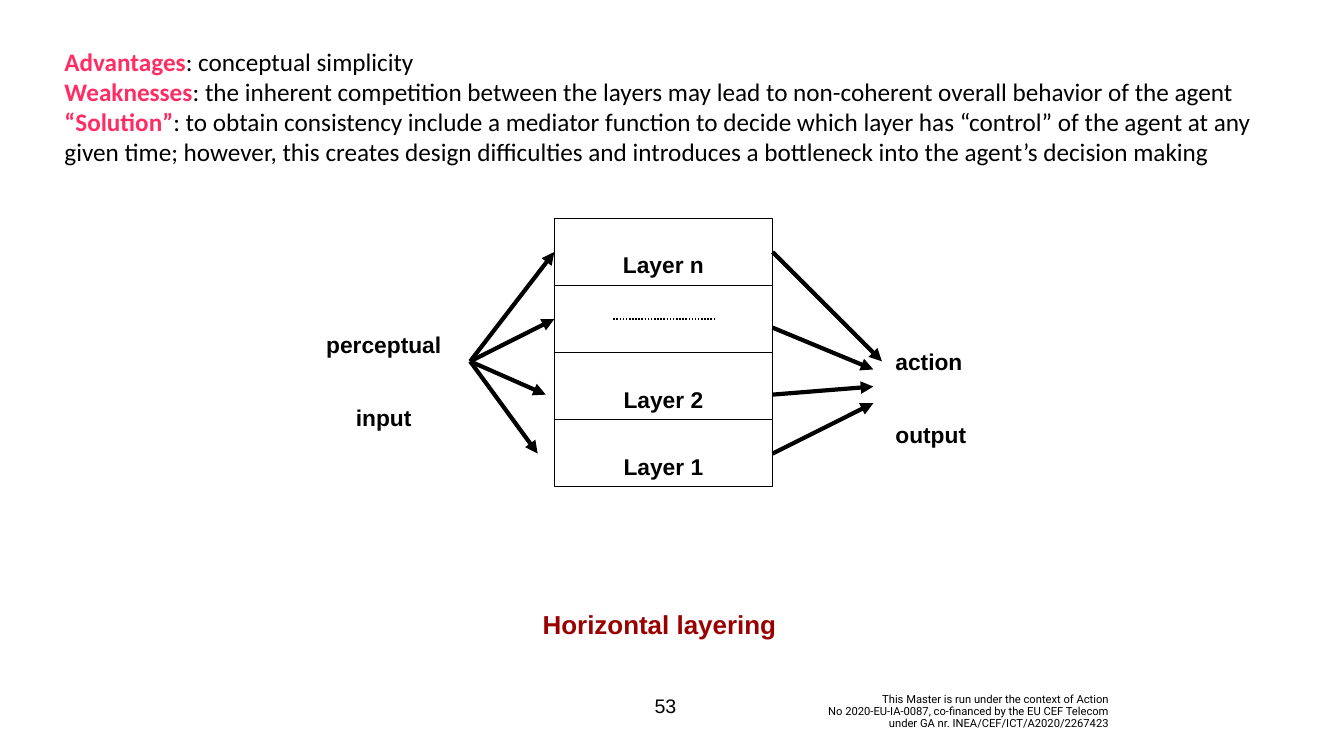
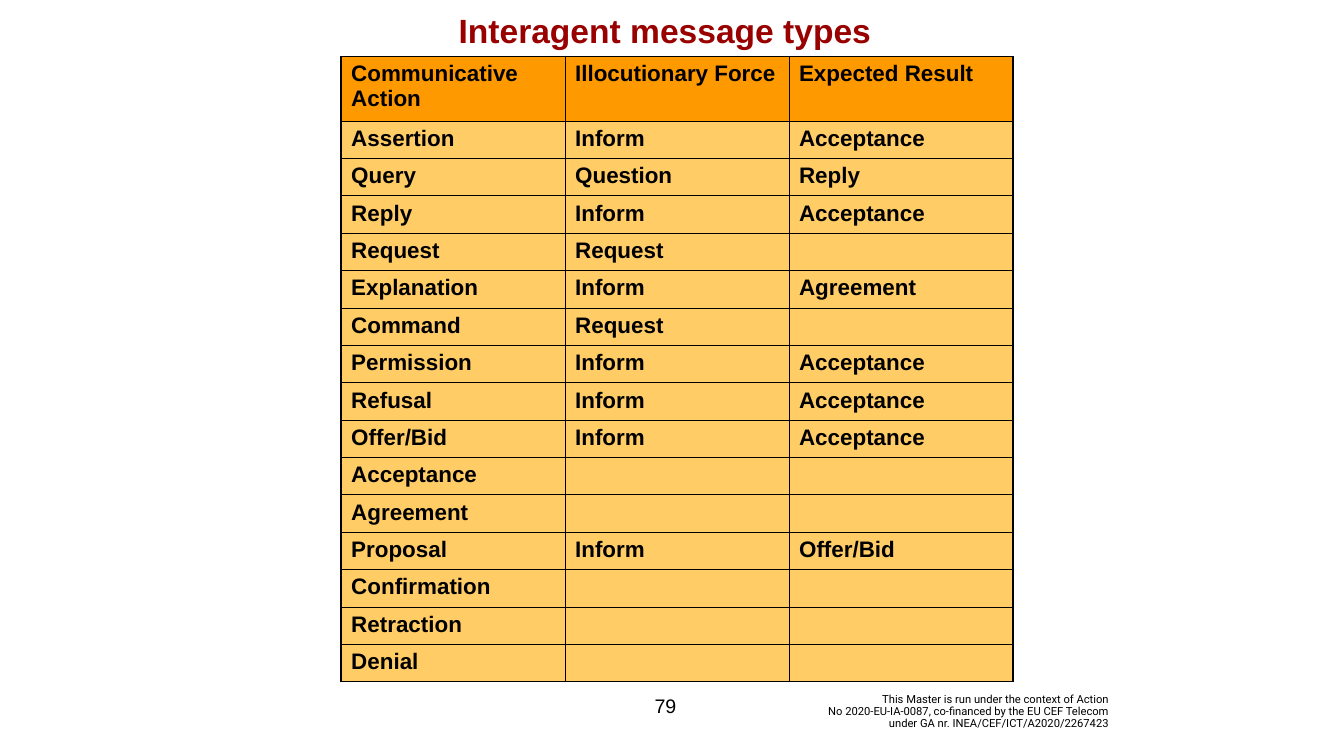
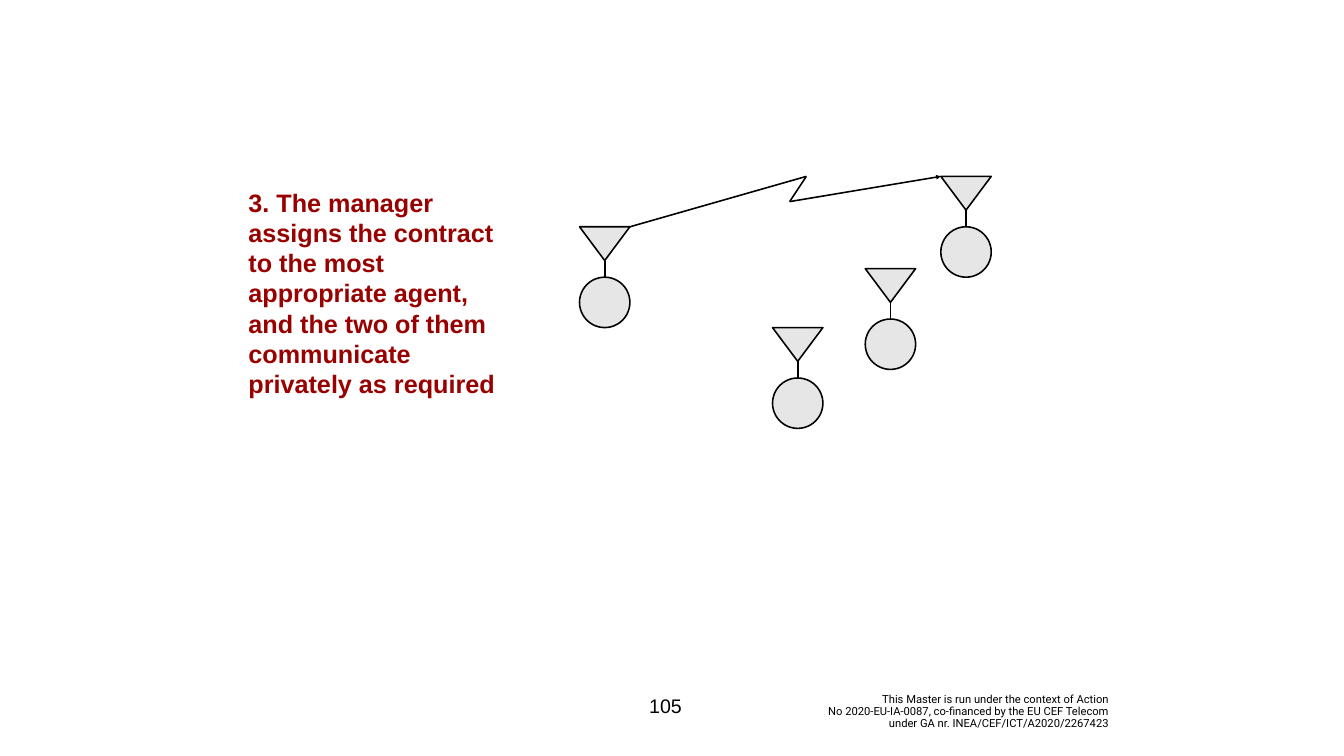
from itertools import pairwise

from lxml import etree
from pptx import Presentation
from pptx.dml.color import RGBColor
from pptx.enum import dml, shapes, text
from pptx.oxml.ns import qn
from pptx.util import Inches, Pt

BLACK = RGBColor(0x00, 0x00, 0x00)
WHITE = RGBColor(0xFF, 0xFF, 0xFF)
DARK_RED = RGBColor(0x99, 0x00, 0x00)
PINK = RGBColor(0xFF, 0x2D, 0x64)
ORANGE = RGBColor(0xFF, 0x99, 0x00)
LIGHT_ORANGE = RGBColor(0xFF, 0xCC, 0x66)
GREY = RGBColor(0xE7, 0xE6, 0xE6)

LEFT, CENTER, RIGHT = text.PP_ALIGN.LEFT, text.PP_ALIGN.CENTER, text.PP_ALIGN.RIGHT
TOP, MIDDLE = text.MSO_ANCHOR.TOP, text.MSO_ANCHOR.MIDDLE
SHAPE = shapes.MSO_SHAPE

FOOTER = ("This Master is run under the context of Action",
          "No 2020-EU-IA-0087, co-financed by the EU CEF Telecom",
          "under GA nr. INEA/CEF/ICT/A2020/2267423")

REMARKS = (
    ("Advantages", ": conceptual simplicity"),
    ("Weaknesses", ": the inherent competition between the layers may lead to "
     "non-coherent overall behavior of the agent"),
    ("“Solution”", ": to obtain consistency include a mediator function to decide "
     "which layer has “control” of the agent at any given time; however, this creates "
     "design difficulties and introduces a bottleneck into the agent’s decision making"),
)

MESSAGES = (
    ("Communicative Action", "Illocutionary Force", "Expected Result"),
    ("Assertion", "Inform", "Acceptance"),
    ("Query", "Question", "Reply"),
    ("Reply", "Inform", "Acceptance"),
    ("Request", "Request", ""),
    ("Explanation", "Inform", "Agreement"),
    ("Command", "Request", ""),
    ("Permission", "Inform", "Acceptance"),
    ("Refusal", "Inform", "Acceptance"),
    ("Offer/Bid", "Inform", "Acceptance"),
    ("Acceptance", "", ""),
    ("Agreement", "", ""),
    ("Proposal", "Inform", "Offer/Bid"),
    ("Confirmation", "", ""),
    ("Retraction", "", ""),
    ("Denial", "", ""),
)


# Text
def style(paragraph, size, color=BLACK, bold=True, font="Arial", align=LEFT, lowered=False):
    paragraph.alignment = align
    paragraph.font.name = font
    paragraph.font.size = Pt(size)
    paragraph.font.bold = bold
    paragraph.font.color.rgb = color
    if lowered:
        for run in paragraph.runs:
            run._r.get_or_add_rPr().set("baseline", "-25000")


def place(box, left, top, width, height):
    box.left, box.top = Inches(left), Inches(top)
    box.width, box.height = Inches(width), Inches(height)


def add_text(slide, area, lines, size, anchor=TOP, **look):
    box = slide.shapes.add_textbox(*map(Inches, area))
    frame = box.text_frame
    frame.word_wrap = True
    frame.vertical_anchor = anchor
    for index, line in enumerate(lines):
        paragraph = frame.add_paragraph() if index else frame.paragraphs[0]
        paragraph.text = line
        if index:
            paragraph.space_before = Pt(size / 2)
        style(paragraph, size, **look)
    return box


def set_title(slide, area, wording, size, **look):
    title = slide.shapes.title
    place(title, *area)
    frame = title.text_frame
    frame.text = wording
    frame.word_wrap = True
    frame.auto_size = text.MSO_AUTO_SIZE.NONE
    frame.vertical_anchor = TOP
    style(frame.paragraphs[0], size, DARK_RED, **look)


def add_remarks(slide):
    frame = add_text(slide, (1.18, 0.86, 24.65, 2.52), [], 36).text_frame
    for index, (term, remark) in enumerate(REMARKS):
        paragraph = frame.add_paragraph() if index else frame.paragraphs[0]
        term_run, remark_run = paragraph.add_run(), paragraph.add_run()
        term_run.text, remark_run.text = term, remark
        style(paragraph, 36, bold=False, font="Calibri")
        term_run.font.bold = True
        term_run.font.color.rgb = PINK


# Shapes and lines
def add_block(slide, kind, area, fill, line_width):
    block = slide.shapes.add_shape(kind, *map(Inches, area))
    block.shadow.inherit = False
    block.fill.solid()
    block.fill.fore_color.rgb = fill
    block.line.color.rgb = BLACK
    block.line.width = Pt(line_width)
    return block


def add_line(slide, start, end, width=2.25, arrow=False, dotted=False):
    line = slide.shapes.add_connector(shapes.MSO_CONNECTOR.STRAIGHT,
                                      *map(Inches, (*start, *end)))
    line.line.color.rgb = BLACK
    line.line.width = Pt(width)
    if dotted:
        line.line.dash_style = dml.MSO_LINE.ROUND_DOT
    if arrow:
        etree.SubElement(line.line._get_or_add_ln(), qn("a:tailEnd"), type="triangle")
    etree.SubElement(line._element.spPr, qn("a:effectLst"))


def add_layer(slide, top, label):
    layer = add_block(slide, SHAPE.RECTANGLE, (11, top, 4.33, 1.33), WHITE, 1.5)
    if label:
        layer.text_frame.text = label
        layer.text_frame.word_wrap = False
        style(layer.text_frame.paragraphs[0], 56, align=CENTER, lowered=True)


def add_agent(slide, left, top):
    middle = left + 0.5
    add_block(slide, SHAPE.FLOWCHART_CONNECTOR, (left, top + 1, 1, 1), GREY, 2.25)
    add_block(slide, SHAPE.FLOWCHART_MERGE, (left, top, 1, 0.67), GREY, 2.25)
    add_line(slide, (middle, top + 0.67), (middle, top + 1))


# Table
def set_borders(cell, widths):
    properties = cell._tc.get_or_add_tcPr()
    for index, (side, width) in enumerate(widths.items()):
        border = etree.Element(qn(f"a:{side}"), w=str(Pt(width)))
        fill = etree.SubElement(border, qn("a:solidFill"))
        etree.SubElement(fill, qn("a:srgbClr"), val=str(BLACK))
        properties.insert(index, border)


def add_message_table(slide):
    rows, columns = len(MESSAGES), len(MESSAGES[0])
    width, height, header_height = 13.33, 12.41, 1.28
    table = slide.shapes.add_table(
        rows, columns, *map(Inches, (6.77, 1.12, width, height))).table
    table.first_row = table.horz_banding = False
    for column in table.columns:
        column.width = Inches(width / columns)
    for r, row in enumerate(table.rows):
        row.height = Inches((height - header_height) / (rows - 1) if r else header_height)
        for c, cell in enumerate(row.cells):
            cell.margin_left = cell.margin_right = Inches(0.2)
            cell.margin_top = cell.margin_bottom = Inches(0.1)
            cell.fill.solid()
            cell.fill.fore_color.rgb = LIGHT_ORANGE if r else ORANGE
            cell.text = MESSAGES[r][c]
            style(cell.text_frame.paragraphs[0], 32)
            outer = {"lnL": c == 0, "lnR": c == columns - 1,
                     "lnT": r == 0, "lnB": r == rows - 1}
            set_borders(cell, {side: 2.25 if edge else 1 for side, edge in outer.items()})


# Shared slide parts
def add_layout_footer(layout, slide):
    """Build the footer on a slide, then move it to the layout all slides share."""
    footer = add_text(slide, (15.02, 13.74, 7.08, 0.76), [""], 16, MIDDLE,
                      bold=False, font="Roboto", align=RIGHT)
    paragraph = footer.text_frame.paragraphs[0]
    paragraph.line_spacing = 0.9
    for index, line in enumerate(FOOTER):
        if index:
            paragraph.add_line_break()
        paragraph.add_run().text = line
    layout.shapes._spTree.append(footer._element)


def add_slide(prs, layout, number):
    slide = prs.slides.add_slide(layout)
    add_text(slide, (12.65, 13.61, 1.11, 0.8), [number], 28, MIDDLE,
             bold=False, align=CENTER)
    return slide


# Slides
def build_layering(slide):
    for index, label in enumerate(("Layer n", "", "Layer 2", "Layer 1")):
        add_layer(slide, 4.33 + index * 4 / 3, label)
    add_line(slide, (12.17, 6.33), (14.17, 6.33), dotted=True)
    add_text(slide, (17.67, 6.33, 2.17, 1.67), ("action", "output"), 56, lowered=True)
    add_text(slide, (6.06, 5.99, 3.11, 1.67), ("perceptual", "input"), 56,
             align=CENTER, lowered=True)
    for layer_entry in ((11, 5), (11, 6.33), (10.83, 7.83), (10.67, 9)):
        add_line(slide, (9.33, 7.17), layer_entry, 6, arrow=True)
    for exit_height, action_end in ((5, (17.5, 7.17)), (6.5, (17.33, 7.33)),
                                    (7.83, (17.33, 7.67)), (9, (17.33, 8))):
        add_line(slide, (15.33, exit_height), action_end, 6, arrow=True)
    set_title(slide, (7.67, 11.43, 10.83, 0.82), "Horizontal layering", 64,
              align=CENTER, lowered=True)
    add_remarks(slide)


def build_messages(slide):
    add_message_table(slide)
    set_title(slide, (4.28, 0.14, 17.83, 0.91), "Interagent message types", 48,
              align=CENTER)


def build_contract(slide):
    for agent in ((11.5, 4.5), (18.67, 3.5), (17.17, 5.33), (15.33, 6.5)):
        add_agent(slide, *agent)
    signal = ((12.5, 4.5), (16, 3.5), (15.67, 4), (18.67, 3.5))
    for start, end in pairwise(signal):
        add_line(slide, start, end, arrow=end == signal[-1])
    set_title(slide, (4.83, 3.66, 5.5, 4.34),
              "3. The manager assigns the contract to the most appropriate agent, "
              "and the two of them communicate privately as required", 36)


def main():
    prs = Presentation()
    prs.slide_width, prs.slide_height = Inches(26.67), Inches(15)
    layout = prs.slide_layouts[5]
    layering, messages, contract = (
        add_slide(prs, layout, number) for number in ("53", "79", "105"))
    add_layout_footer(layout, layering)
    build_layering(layering)
    build_messages(messages)
    build_contract(contract)
    prs.save("out.pptx")


if __name__ == "__main__":
    main()
